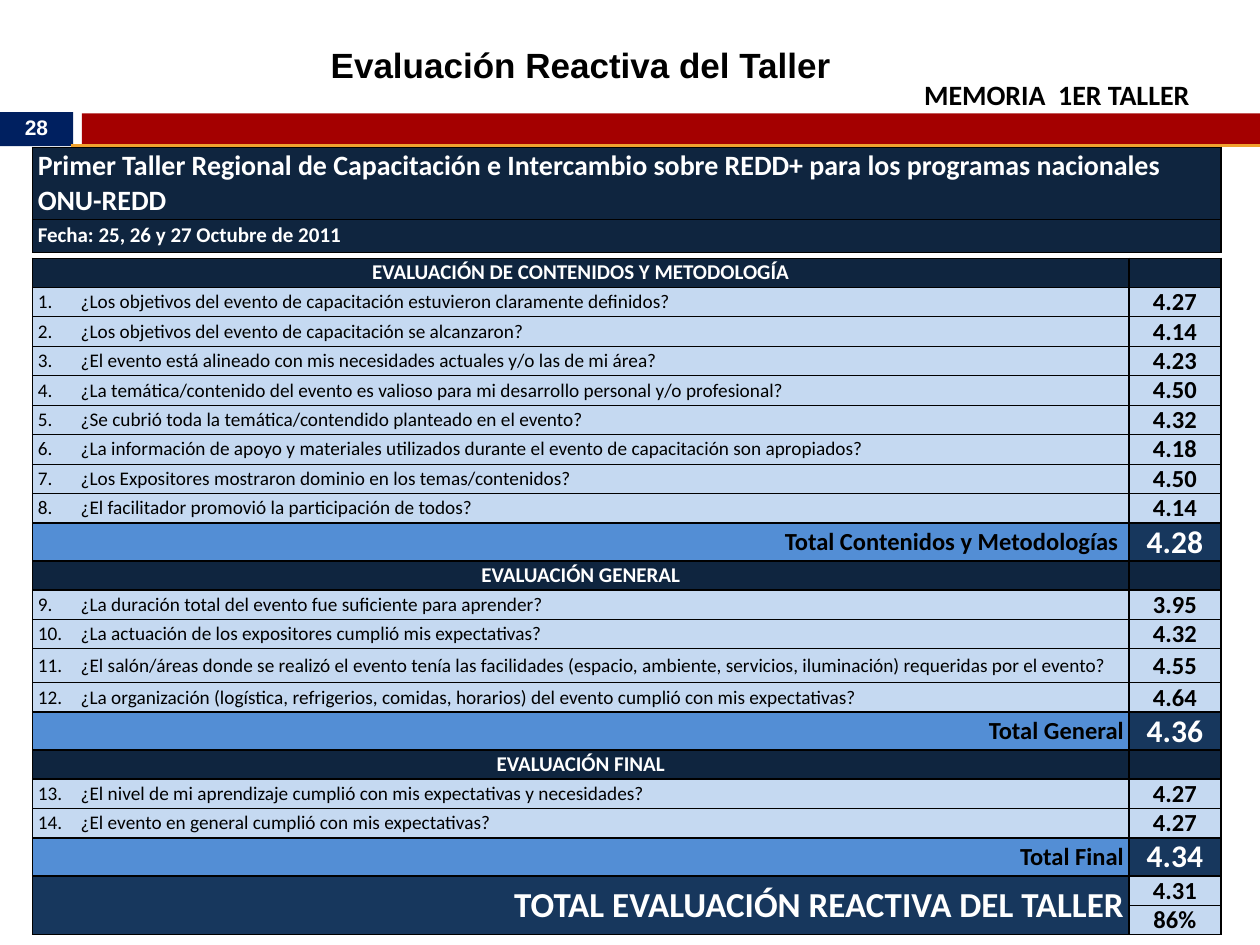
from lxml.etree import SubElement as Sub
from pptx import Presentation
from pptx.dml.color import RGBColor as Rgb
from pptx.enum.shapes import MSO_CONNECTOR as Conn, MSO_SHAPE as Kind
from pptx.enum.text import MSO_ANCHOR as Anchor, PP_ALIGN as Align
from pptx.oxml.ns import qn
from pptx.util import Inches, Pt

TITLE = "Evaluación Reactiva del Taller"
MEMO = "MEMORIA  1ER TALLER"
PAGE = "28"
ROWS = [
    ("name", "Primer Taller Regional de Capacitación e Intercambio sobre REDD+ para los programas nacionales ONU-REDD", ""),
    ("date", "Fecha: 25, 26 y 27 Octubre de 2011", ""),
    ("gap", "", ""),
    ("head", "EVALUACIÓN DE CONTENIDOS Y METODOLOGÍA", ""),
    ("item", "¿Los objetivos del evento de capacitación estuvieron claramente definidos?", "4.27"),
    ("item", "¿Los objetivos del evento de capacitación se alcanzaron?", "4.14"),
    ("item", "¿El evento está alineado con mis necesidades actuales y/o las de mi área?", "4.23"),
    ("item", "¿La temática/contenido del evento es valioso para mi desarrollo personal y/o profesional?", "4.50"),
    ("item", "¿Se cubrió toda la temática/contendido planteado en el evento?", "4.32"),
    ("item", "¿La información de apoyo y materiales utilizados durante el evento de capacitación son apropiados?", "4.18"),
    ("item", "¿Los Expositores mostraron dominio en los temas/contenidos?", "4.50"),
    ("item", "¿El facilitador promovió la participación de todos?", "4.14"),
    ("total", "Total Contenidos y Metodologías ", "4.28"),
    ("head", "EVALUACIÓN GENERAL", ""),
    ("item", "¿La duración total del evento fue suficiente para aprender?", "3.95"),
    ("item", "¿La actuación de los expositores cumplió mis expectativas?", "4.32"),
    ("item", "¿El salón/áreas donde se realizó el evento tenía las facilidades (espacio, ambiente, servicios, iluminación) requeridas por el evento?", "4.55"),
    ("item", "¿La organización (logística, refrigerios, comidas, horarios) del evento cumplió con mis expectativas?", "4.64"),
    ("total", "Total General", "4.36"),
    ("head", "EVALUACIÓN FINAL", ""),
    ("item", "¿El nivel de mi aprendizaje cumplió con mis expectativas y necesidades?", "4.27"),
    ("item", "¿El evento en general cumplió con mis expectativas?", "4.27"),
    ("total", "Total Final", "4.34"),
    ("final", "TOTAL EVALUACIÓN REACTIVA DEL TALLER", "4.31"),
    ("final", "", "86%"),
]
COLS = (7.24, 1.46, 0.73)
TALL = {"name": 0.57, "date": 0.26, "gap": 0.05, "total": 0.3}
LONG, STEP = 120, 0.23

THEME = {
    "sans": "Arial", "body": "Calibri",
    "black": "000000", "white": "FFFFFF", "red": "A40000", "blue": "002060",
    "gold": "F0A22E", "dark": "0F253F", "navy": "17375D", "mid": "538ED5", "pale": "C5D9F1",
    "title": 20, "memo": 16, "page": 12, "tiny": 3,
}
LEFT, MID, RIGHT = Align.LEFT, Align.CENTER, Align.RIGHT
LABEL = {
    "name": ("dark", "white", 16, True, LEFT),
    "date": ("dark", "white", 12, True, LEFT),
    "gap": (None, "black", THEME["tiny"], False, LEFT),
    "head": ("dark", "white", 12, True, MID),
    "item": ("pale", "black", 11, False, LEFT),
    "total": ("mid", "black", 14, True, RIGHT),
    "final": ("navy", "white", 20, True, RIGHT),
}
SCORE = LABEL | {
    "item": ("pale", "black", 14, True, MID),
    "total": ("navy", "white", 18, True, MID),
    "final": ("pale", "black", 14, True, MID),
}


def tint(name):
    return Rgb.from_string(THEME[name])


def write(para, text, face, hue, size, bold, align):
    para.alignment = align
    para.font.name, para.font.size, para.font.bold = THEME[face], Pt(size), bold
    para.font.color.rgb = tint(hue)
    if text:
        para.add_run().text = text
    else:
        Sub(para._p, qn("a:endParaRPr"), sz=str(size * 100))


def label(slide, box, *style):
    frame = slide.shapes.add_textbox(*map(Inches, box)).text_frame
    frame.word_wrap = True
    write(frame.paragraphs[0], *style)


def bar(slide, box, hue):
    shape = slide.shapes.add_shape(Kind.RECTANGLE, *map(Inches, box))
    shape.shadow.inherit = False
    shape.fill.solid()
    shape.fill.fore_color.rgb = tint(hue)
    shape.line.fill.background()
    return shape


def rule(slide, y):
    line = slide.shapes.add_connector(Conn.STRAIGHT, *map(Inches, (0.56, y, 10, y)))
    line.line.color.rgb, line.line.width = tint("gold"), Pt(0.75)
    Sub(line._element.spPr, qn("a:effectLst"))


def edge(cell, widths):
    props = cell._tc.get_or_add_tcPr()
    for side, wide in zip("LRTB", widths):
        line = Sub(props, qn(f"a:ln{side}"), w=str(Pt(wide)))
        if wide:
            fill = Sub(line, qn("a:solidFill"))
            Sub(fill, qn("a:srgbClr"), val=THEME["black"])
        else:
            Sub(line, qn("a:noFill"))


def hang(para):
    props = para._p.get_or_add_pPr()
    step = Inches(0.34)
    props.set("marL", str(step))
    props.set("indent", str(-step))
    tabs = Sub(props, qn("a:tabLst"))
    Sub(tabs, qn("a:tab"), pos=str(step), algn="l")


def fill_cell(cell, text, style, widths, item):
    hue, ink, size, bold, align = style
    cell.margin_left = cell.margin_right = Inches(0.04)
    cell.margin_top = cell.margin_bottom = 0
    cell.vertical_anchor = Anchor.MIDDLE
    edge(cell, widths)
    if hue:
        cell.fill.solid()
        cell.fill.fore_color.rgb = tint(hue)
    else:
        cell.fill.background()
    para = cell.text_frame.paragraphs[0]
    if item:
        hang(para)
    write(para, text, "body", ink, size, bold, align)


def seam(one, two):
    return 0.5 if (one, two) in {("name", "date"), ("date", "gap"), ("item", "item"), ("final", "final")} else 1


def add_scores(slide):
    high = [0.27 if kind == "item" and len(text) > LONG else TALL.get(kind, STEP) for kind, text, _ in ROWS]
    box = map(Inches, (0.26, 1.17, sum(COLS), sum(high)))
    grid = slide.shapes.add_table(len(ROWS), len(COLS), *box).table
    grid.first_row = grid.horz_banding = False
    for col, wide in zip(grid.columns, COLS):
        col.width = Inches(wide)
    kinds = [None, *(row[0] for row in ROWS), None]
    num = 0
    for i, (kind, text, score) in enumerate(ROWS):
        grid.rows[i].height = Inches(high[i])
        side = 0 if kind == "gap" else 1
        widths = (side, side, seam(kinds[i], kind), seam(kind, kinds[i + 2]))
        item = kind == "item"
        if item:
            num += 1
            text = f"{num}.\t{text}"
        fill_cell(grid.cell(i, 0), text, LABEL[kind], widths, item)
        fill_cell(grid.cell(i, 1), "", LABEL[kind], widths, False)
        fill_cell(grid.cell(i, 2), score, SCORE[kind], widths, False)
        if kind in ("name", "date"):
            grid.cell(i, 0).merge(grid.cell(i, 2))
        elif kind not in ("gap", "final"):
            grid.cell(i, 0).merge(grid.cell(i, 1))
    last = len(ROWS) - 1
    grid.cell(last - 1, 0).merge(grid.cell(last, 1))


def main():
    """Build the workshop evaluation slide."""
    deck = Presentation()
    deck.slide_width, deck.slide_height = Inches(10), Inches(7.5)
    slide = deck.slides.add_slide(deck.slide_layouts[6])
    label(slide, (7.08, 0.57, 2.46, 0.37), MEMO, "body", "black", THEME["memo"], True, RIGHT)
    bar(slide, (0.65, 0.9, 9.35, 0.25), "red")
    frame = bar(slide, (0, 0.89, 0.58, 0.27), "blue").text_frame
    frame.vertical_anchor = Anchor.MIDDLE
    frame.paragraphs[0].line_spacing = 0.8
    write(frame.paragraphs[0], PAGE, "sans", "white", THEME["page"], True, MID)
    for y in (1.15, 1.16):
        rule(slide, y)
    add_scores(slide)
    label(slide, (2.28, 0.3, 4.66, 0.44), TITLE, "sans", "black", THEME["title"], True, MID)
    deck.save("out.pptx")


if __name__ == "__main__":
    main()
